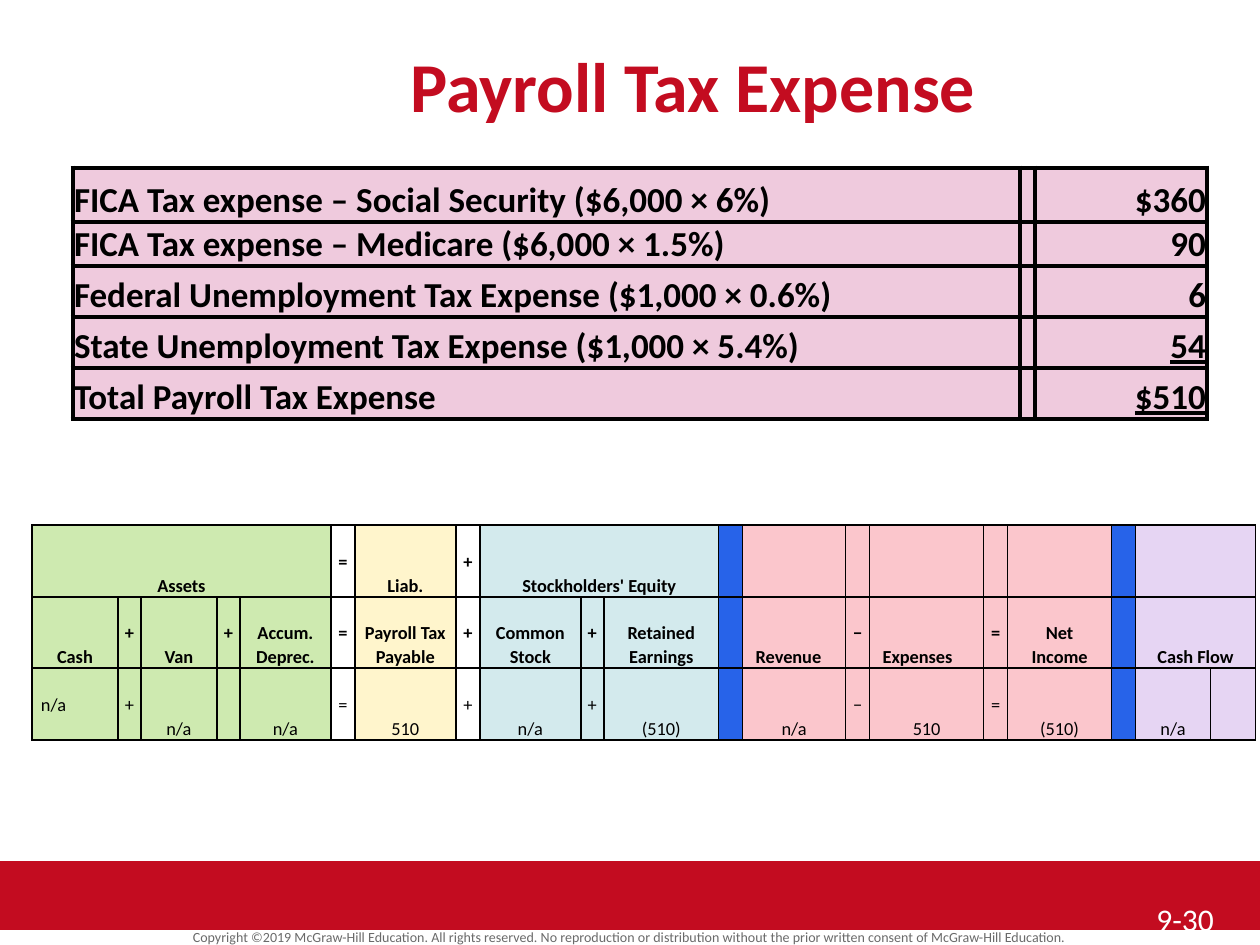
import pptx
import pptx.dml.color
import pptx.enum.shapes
import pptx.enum.text
import pptx.oxml
import pptx.oxml.ns
import pptx.util

RGBColor = pptx.dml.color.RGBColor
ALIGN = pptx.enum.text.PP_ALIGN
ANCHOR = pptx.enum.text.MSO_ANCHOR
SCALE = 914400 / 126
FONT = "Calibri"
RED = RGBColor(0xC3, 0x0C, 0x20)
WHITE = RGBColor(0xFF, 0xFF, 0xFF)
BLACK = RGBColor(0, 0, 0)
GRAY = RGBColor(0x6A, 0x6A, 0x6A)
ROSE = RGBColor(0xEF, 0xCA, 0xDD)
GREEN = RGBColor(0xCE, 0xEA, 0xB0)
YELLOW = RGBColor(0xFF, 0xF5, 0xCC)
TEAL = RGBColor(0xD3, 0xEA, 0xED)
BLUE = RGBColor(0x27, 0x63, 0xE9)
PINK = RGBColor(0xFB, 0xC6, 0xCC)
LILAC = RGBColor(0xE6, 0xD5, 0xF3)

EXPENSES = [
    ("FICA Tax expense – Social Security ($6,000 × 6%)", "$360"),
    ("FICA Tax expense – Medicare ($6,000 × 1.5%)", "90"),
    ("Federal Unemployment Tax Expense ($1,000 × 0.6%)", "6"),
    ("State Unemployment Tax Expense ($1,000 × 5.4%)", "54"),
    ("Total Payroll Tax Expense", "$510"),
]
UNDERLINED = ("54", "$510")
ACCOUNT_WIDTHS = [86, 23, 76, 23, 91, 24, 101, 24, 101, 23,
                  115, 24, 103, 24, 114, 24, 104, 24, 75, 45]
ACCOUNT_FILLS = ([GREEN] * 5 + [None, YELLOW, None] + [TEAL] * 3 + [BLUE]
                 + [PINK] * 5 + [BLUE] + [LILAC] * 2)
ACCOUNTS = [
    ["Assets", "", "", "", "", "=", "Liab.", "+", "Stockholders' Equity", "",
     "", "", "", "", "", "", "", "", "", ""],
    ["Cash", "+", "Van", "+", "Accum. Deprec.", "=", "Payroll Tax Payable", "+",
     "Common Stock", "+", "Retained Earnings", "", "Revenue", "−", "Expenses",
     "=", "Net Income", "", "Cash Flow", ""],
    ["n/a", "+", "n/a", "", "n/a", "=", "510", "+", "n/a", "+", "(510)", "",
     "n/a", "−", "510", "=", "(510)", "", "n/a", ""],
]
MERGES = [(0, 0, 4), (0, 8, 10), (0, 18, 19), (1, 18, 19)]
OPERATORS = ("=", "+", "−")


def px(length):
    """Turn a length in px into EMU."""
    return pptx.util.Emu(round(length * SCALE))


def style(paragraph, size, color, bold=False, align=ALIGN.LEFT):
    """Set the font and alignment of a paragraph."""
    paragraph.alignment = align
    paragraph.font.name = FONT
    paragraph.font.size = pptx.util.Pt(size)
    paragraph.font.bold = bold
    paragraph.font.color.rgb = color


def add_label(slide, box, text, size, color, bold=False, align=ALIGN.LEFT,
              anchor=ANCHOR.TOP, inset=0):
    """Write one line of text in a box."""
    frame = slide.shapes.add_textbox(*map(px, box)).text_frame
    frame.word_wrap = True
    frame.vertical_anchor = anchor
    frame.margin_top = px(inset)
    frame.margin_bottom = 0
    frame.text = text
    style(frame.paragraphs[0], size, color, bold, align)


def add_grid(slide, left, top, widths, heights):
    """Add a plain table with the given column widths and row heights."""
    box = left, top, sum(widths), sum(heights)
    grid = slide.shapes.add_table(len(heights), len(widths), *map(px, box)).table
    grid.first_row = False
    grid.horz_banding = False
    for column, width in zip(grid.columns, widths):
        column.width = px(width)
    for row, height in zip(grid.rows, heights):
        row.height = px(height)
    return grid


def dress_cell(cell, text, fill, line, margin, anchor=ANCHOR.BOTTOM):
    """Set the text, fill, borders and margins of a cell and return its paragraph."""
    cell.text = text
    cell.vertical_anchor = anchor
    cell.margin_left = cell.margin_right = px(margin)
    cell.margin_top = cell.margin_bottom = 0
    if fill is None:
        cell.fill.background()
    else:
        cell.fill.solid()
        cell.fill.fore_color.rgb = fill
    properties = cell._tc.get_or_add_tcPr()
    for index, side in enumerate(("lnL", "lnR", "lnT", "lnB")):
        properties.insert(index, pptx.oxml.parse_xml(
            f'<a:{side} {pptx.oxml.ns.nsdecls("a")} w="{pptx.util.Pt(line)}">'
            f'<a:solidFill><a:srgbClr val="{BLACK}"/></a:solidFill></a:{side}>'))
    return cell.text_frame.paragraphs[0]


def add_expense_table(slide, left, top):
    """List the payroll taxes and their total."""
    grid = add_grid(slide, left, top, [947, 15, 172], [54, 44, 51, 51, 51])
    for row, (tax, amount) in enumerate(EXPENSES):
        for column, text in enumerate((tax, "", amount)):
            paragraph = dress_cell(grid.cell(row, column), text, ROSE, 3, 1)
            style(paragraph, 20, BLACK, True, ALIGN.RIGHT if column == 2 else ALIGN.LEFT)
            if text in UNDERLINED:
                paragraph.font.underline = True


def add_equation_table(slide, left, top):
    """Show the effect on the accounting equation."""
    grid = add_grid(slide, left, top, ACCOUNT_WIDTHS, [72, 71, 72])
    for row, texts in enumerate(ACCOUNTS):
        for column, (text, fill) in enumerate(zip(texts, ACCOUNT_FILLS)):
            cell = grid.cell(row, column)
            is_operator = text in OPERATORS
            is_cash_value = (row, column) == (2, 0)
            is_left = is_cash_value or text in ("Revenue", "Expenses")
            paragraph = dress_cell(
                cell, text, fill, 1, 0 if is_operator else 9,
                ANCHOR.MIDDLE if is_operator or is_cash_value else ANCHOR.BOTTOM)
            if is_left and not is_cash_value:
                cell.margin_left = px(13)
            paragraph.line_spacing = 1.07
            style(paragraph, 10.5, BLACK, row < 2, ALIGN.LEFT if is_left else ALIGN.CENTER)
    for row, first, last in MERGES:
        grid.cell(row, first).merge(grid.cell(row, last))


def add_footer(slide, left, top, width):
    """Draw the red band with the copyright line and page number."""
    band = slide.shapes.add_shape(pptx.enum.shapes.MSO_SHAPE.RECTANGLE,
                                  *map(px, (left, top, width, 69)))
    band.shadow.inherit = False
    band.fill.solid()
    band.fill.fore_color.rgb = RED
    band.line.fill.background()
    add_label(slide, (left, top + 64, width, 24),
              "Copyright ©2019 McGraw-Hill Education. All rights reserved. No reproduction "
              "or distribution without the prior written consent of McGraw-Hill Education.",
              8, GRAY, align=ALIGN.CENTER, anchor=ANCHOR.MIDDLE)
    add_label(slide, (left + width - 116, top + 31, 116, 53), "9-30", 18, WHITE, inset=8)


def main():
    """Build the slide and save it."""
    deck = pptx.Presentation()
    deck.slide_width, deck.slide_height = px(1260), px(945)
    slide = deck.slides.add_slide(deck.slide_layouts[6])
    add_footer(slide, 0, 861, 1260)
    add_label(slide, (126, 32, 1134, 84), "Payroll Tax Expense", 40, RED, True,
              ALIGN.CENTER, inset=10)
    add_equation_table(slide, 32, 525)
    add_expense_table(slide, 73, 168)
    deck.save("out.pptx")


if __name__ == "__main__":
    main()
